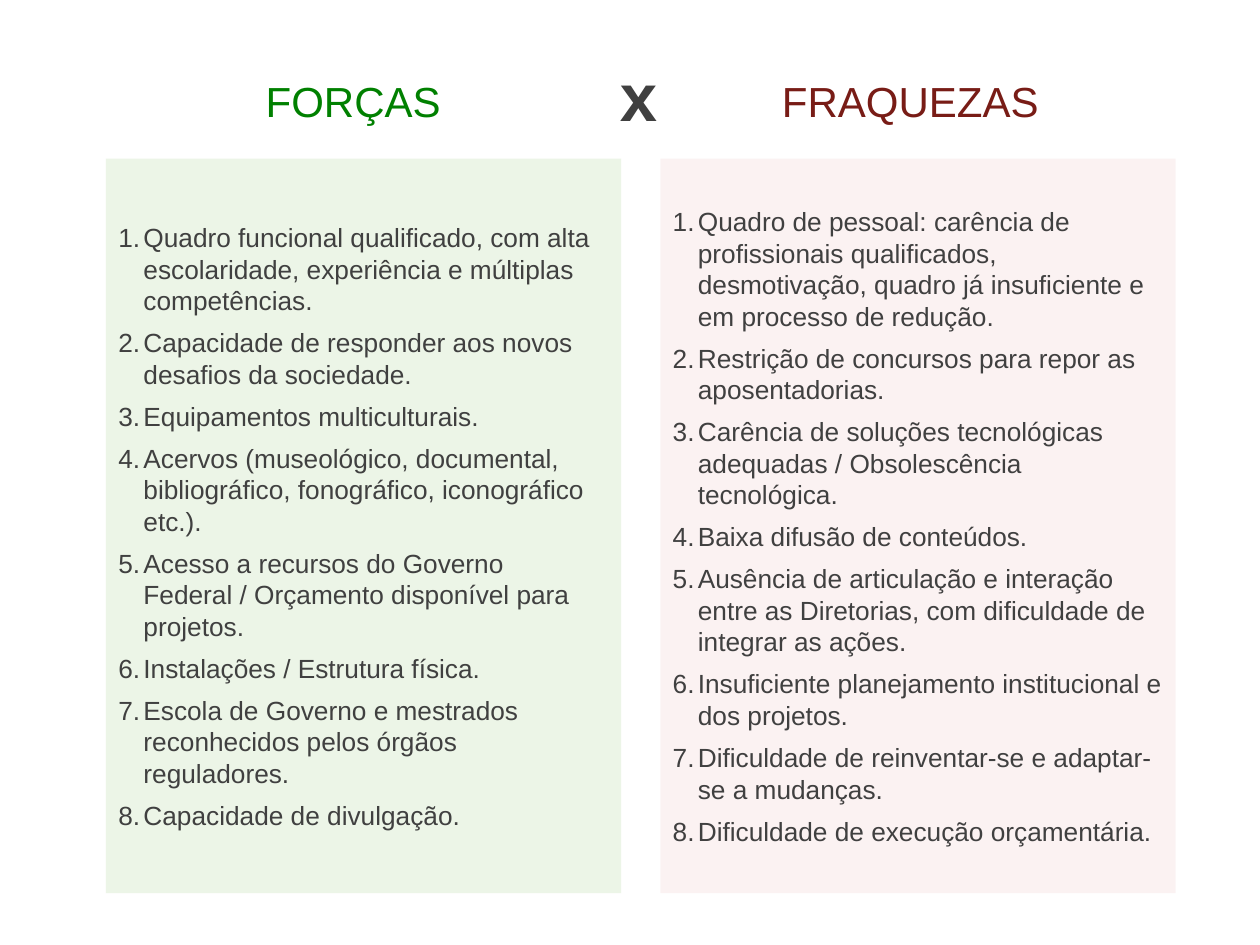
from dataclasses import dataclass

from pptx import Presentation
from pptx.dml.color import RGBColor
from pptx.enum.shapes import MSO_SHAPE
from pptx.enum.text import MSO_ANCHOR, MSO_AUTO_SIZE, PP_ALIGN
from pptx.oxml.ns import qn
from pptx.util import Inches, Pt
from lxml import etree

RECTANGLE = MSO_SHAPE.RECTANGLE
TOP, MIDDLE, BOTTOM = MSO_ANCHOR.TOP, MSO_ANCHOR.MIDDLE, MSO_ANCHOR.BOTTOM
LEFT, CENTER = PP_ALIGN.LEFT, PP_ALIGN.CENTER
FIT_SHAPE = MSO_AUTO_SIZE.SHAPE_TO_FIT_TEXT


@dataclass(frozen=True)
class Theme:
    font: str = "Arial"
    text: str = "404040"
    strength: str = "008000"
    weakness: str = "781C16"
    strength_fill: str = "CCE4BE"
    weakness_fill: str = "C00000"
    body_size: int = 15
    heading_size: int = 24
    versus_size: int = 66
    item_gap: int = 6
    item_indent: float = 0.2


THEME = Theme()
SLIDE_WIDTH, SLIDE_HEIGHT = 10, 7.5
COLUMN_LEFT, COLUMN_WIDTH, COLUMN_GAP = 0.84, 4.09, 0.31
HEADING_TOP, HEADING_HEIGHT = 0.55, 0.5
PANEL_TOP, PANEL_HEIGHT = 1.26, 5.83

STRENGTHS = [
    "Quadro funcional qualificado, com alta escolaridade, experiência e múltiplas competências.",
    "Capacidade de responder aos novos desafios da sociedade.",
    "Equipamentos multiculturais.",
    "Acervos (museológico, documental, bibliográfico, fonográfico, iconográfico etc.).",
    "Acesso a recursos do Governo Federal / Orçamento disponível para projetos.",
    "Instalações / Estrutura física.",
    "Escola de Governo e mestrados reconhecidos pelos órgãos reguladores.",
    "Capacidade de divulgação.",
]
WEAKNESSES = [
    "Quadro de pessoal: carência de profissionais qualificados, desmotivação, "
    "quadro já insuficiente e em processo de redução.",
    "Restrição de concursos para repor as aposentadorias.",
    "Carência de soluções tecnológicas adequadas / Obsolescência tecnológica.",
    "Baixa difusão de conteúdos.",
    "Ausência de articulação e interação entre as Diretorias, com dificuldade de integrar as ações.",
    "Insuficiente planejamento institucional e dos projetos.",
    "Dificuldade de reinventar-se e adaptar-se a mudanças.",
    "Dificuldade de execução orçamentária.",
]


def write_text(paragraph, text, size, color=THEME.text, bold=False, align=LEFT,
               numbered=False, space_before=0, baseline=None):
    paragraph.alignment = align
    paragraph.space_before = Pt(space_before)
    if numbered:
        properties = paragraph._p.get_or_add_pPr()
        indent = Inches(THEME.item_indent)
        properties.set("marL", str(indent))
        properties.set("indent", str(-indent))
        etree.SubElement(properties, qn("a:buFont"), typeface="+mj-lt")
        etree.SubElement(properties, qn("a:buAutoNum"), type="arabicPeriod")
    run = paragraph.add_run()
    run.text = text
    run.font.name = THEME.font
    run.font.size = Pt(size)
    run.font.bold = bold
    run.font.color.rgb = RGBColor.from_string(color)
    if baseline is not None:
        run._r.get_or_add_rPr().set("baseline", str(baseline * 1000))


def set_frame(shape, anchor, horizontal=0.1, vertical=0.05):
    frame = shape.text_frame
    frame.word_wrap = True
    frame.vertical_anchor = anchor
    frame.margin_left = frame.margin_right = Inches(horizontal)
    frame.margin_top = frame.margin_bottom = Inches(vertical)
    return frame


def add_label(slide, box, text, size, anchor=TOP, margins=(0.1, 0.05), **text_format):
    label = slide.shapes.add_textbox(*map(Inches, box))
    frame = set_frame(label, anchor, *margins)
    frame.auto_size = FIT_SHAPE
    write_text(frame.paragraphs[0], text, size, **text_format)


def add_panel(slide, box, items, fill, opacity):
    panel = slide.shapes.add_shape(RECTANGLE, *map(Inches, box))
    panel.shadow.inherit = False
    panel.line.fill.background()
    panel.fill.solid()
    panel.fill.fore_color.rgb = RGBColor.from_string(fill)
    color = panel._element.spPr.find(f"{qn('a:solidFill')}/{qn('a:srgbClr')}")
    etree.SubElement(color, qn("a:alpha"), val=str(opacity * 1000))
    frame = set_frame(panel, MIDDLE)
    for index, item in enumerate(items):
        paragraph = frame.add_paragraph() if index else frame.paragraphs[0]
        write_text(paragraph, item, THEME.body_size, numbered=True,
                   space_before=THEME.item_gap if index else 0)


def add_column(slide, left, heading, heading_offset, heading_width, color, align,
               items, fill, opacity):
    add_label(slide, (left + heading_offset, HEADING_TOP, heading_width, HEADING_HEIGHT),
              heading, THEME.heading_size, color=color, align=align)
    add_panel(slide, (left, PANEL_TOP, COLUMN_WIDTH, PANEL_HEIGHT), items, fill, opacity)


def add_versus(slide, box):
    add_label(slide, box, "x", THEME.versus_size, anchor=BOTTOM, margins=(0.09, 0.04),
              bold=True, baseline=30)


def main():
    presentation = Presentation()
    presentation.slide_width = Inches(SLIDE_WIDTH)
    presentation.slide_height = Inches(SLIDE_HEIGHT)
    slide = presentation.slides.add_slide(presentation.slide_layouts.get_by_name("Blank"))
    add_column(slide, COLUMN_LEFT, "FORÇAS", 1.17, 1.82, THEME.strength, LEFT,
               STRENGTHS, THEME.strength_fill, 37)
    add_column(slide, COLUMN_LEFT + COLUMN_WIDTH + COLUMN_GAP, "FRAQUEZAS", 0.66, 2.65,
               THEME.weakness, CENTER, WEAKNESSES, THEME.weakness_fill, 5)
    add_versus(slide, (4.83, 0.63, 0.58, 0.83))
    presentation.save("out.pptx")


if __name__ == "__main__":
    main()
